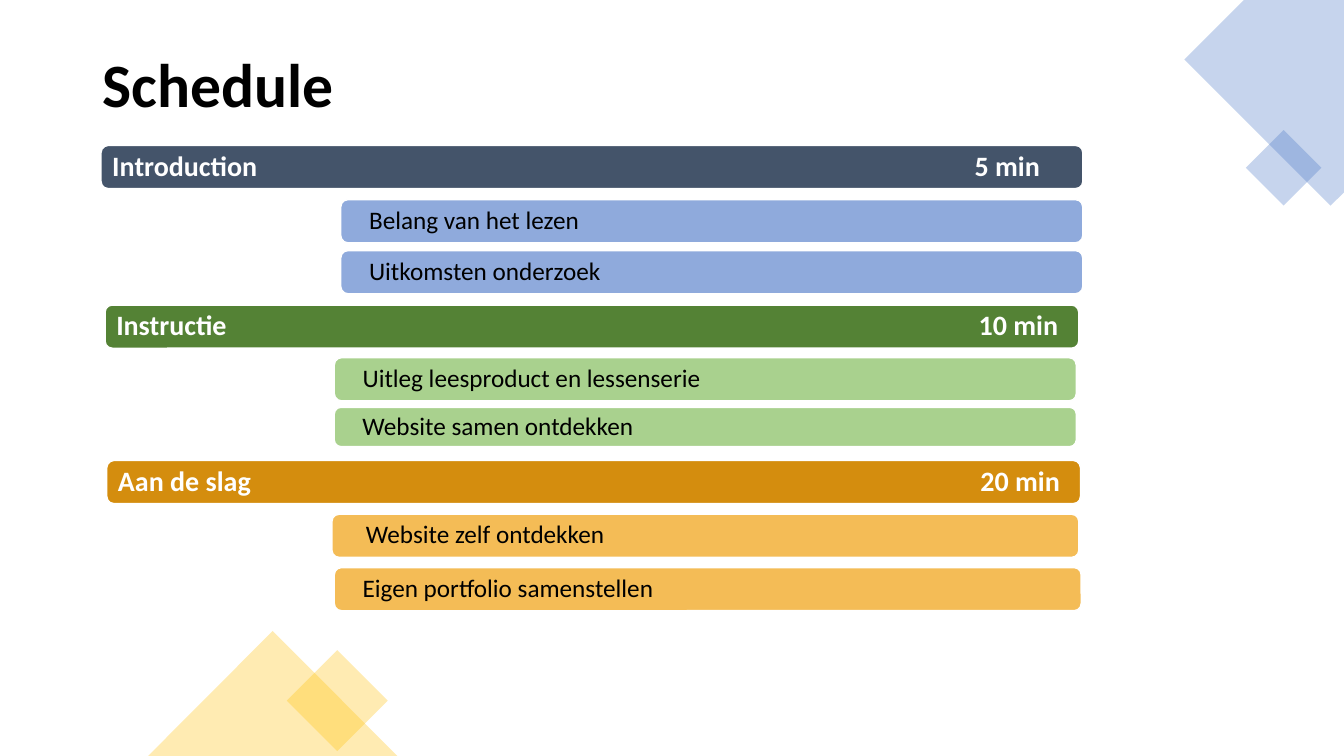
import pptx
import pptx.dml.color
import pptx.enum.shapes
import pptx.enum.text
import pptx.oxml
import pptx.oxml.ns
import pptx.util

Pt = pptx.util.Pt
SHAPES = pptx.enum.shapes.MSO_SHAPE
FONT = "Calibri"
BLUE, YELLOW = "4472C4", "FFC000"
BAR_HEIGHT = 30.8
MINUTES_TAB = 616

# Section: name, minutes, (left, top, width), fill, task fill, tasks
# Task: text, (left, top, width, height), text indent
SECTIONS = [
    ("Introduction", "5 min", (72.2, 103.9, 701.3), "44546A", "8FAADC", [
        ("Belang van het lezen", (243.4, 142.6, 530, BAR_HEIGHT), 12.2),
        ("Uitkomsten onderzoek", (243.4, 179, 530, BAR_HEIGHT), 12.2),
    ]),
    ("Instructie", "10 min", (75.1, 217.9, 695.5), "548235", "A9D18E", [
        ("Uitleg leesproduct en lessenserie", (238.8, 255.5, 530, BAR_HEIGHT), 12.2),
        ("Website samen ontdekken", (238.8, 291, 530, 28), 12.2),
    ]),
    ("Aan de slag", "20 min", (76.3, 328.9, 695.5), "D48D0E", "F4BC56", [
        ("Website zelf ontdekken", (237.1, 367.3, 533.5, BAR_HEIGHT), 16.3),
        ("Eigen portfolio samenstellen", (238.8, 405.4, 533.5, BAR_HEIGHT), 12.2),
    ]),
]


def rgb(hex_colour):
    return pptx.dml.color.RGBColor.from_string(hex_colour)


def paint(shape, colour, opacity=None):
    """Fill a shape, optionally see-through, without shadow or outline."""
    shape.shadow.inherit = False
    shape.fill.solid()
    shape.fill.fore_color.rgb = rgb(colour)
    shape.line.fill.background()
    if opacity is not None:
        solid = shape.fill._xPr.find(pptx.oxml.ns.qn("a:solidFill"))
        alpha = pptx.oxml.parse_xml(
            f'<a:alpha {pptx.oxml.ns.nsdecls("a")} val="{opacity * 1000}"/>')
        solid[0].append(alpha)


def add_ornament(slide, kind, left, top, width, height, colour, rotation=0):
    ornament = slide.shapes.add_shape(kind, Pt(left), Pt(top), Pt(width), Pt(height))
    ornament.rotation = rotation
    paint(ornament, colour, 30)


def add_corner(slide, points):
    (start_x, start_y), *rest = [(Pt(x), Pt(y)) for x, y in points]
    outline = slide.shapes.build_freeform(start_x, start_y)
    outline.add_line_segments(rest, close=True)
    paint(outline.convert_to_shape(), BLUE, 30)


def write(frame, text, size, colour, bold):
    """Write one left-aligned line, centred vertically."""
    frame.word_wrap = True
    frame.vertical_anchor = pptx.enum.text.MSO_ANCHOR.MIDDLE
    line = frame.paragraphs[0]
    line.alignment = pptx.enum.text.PP_ALIGN.LEFT
    line.line_spacing = 0.9
    run = line.add_run()
    run.text = text
    run.font.name = FONT
    run.font.size = Pt(size)
    run.font.bold = bold
    run.font.color.rgb = rgb(colour)
    return line


def add_bar(slide, box, fill, text, size, colour, bold=False, indent=0):
    bar = slide.shapes.add_shape(SHAPES.ROUNDED_RECTANGLE, *map(Pt, box))
    paint(bar, fill)
    bar.line.color.rgb = rgb("FFFFFF")
    bar.line.width = Pt(1)
    frame = bar.text_frame
    frame.margin_left = Pt(6.5 + indent)
    frame.margin_right = frame.margin_top = frame.margin_bottom = Pt(6.5)
    return write(frame, text, size, colour, bold)


def add_section(slide, name, minutes, place, fill, task_fill, tasks):
    heading = add_bar(slide, (*place, BAR_HEIGHT), fill,
                      f"{name}\t{minutes}", 20, "FFFFFF", bold=True)
    heading._p.get_or_add_pPr().append(pptx.oxml.parse_xml(
        f'<a:tabLst {pptx.oxml.ns.nsdecls("a")}>'
        f'<a:tab pos="{Pt(MINUTES_TAB)}" algn="l"/></a:tabLst>'))
    for task, box, indent in tasks:
        add_bar(slide, box, task_fill, task, 18, "000000", indent=indent)


def main():
    deck = pptx.Presentation()
    deck.slide_width, deck.slide_height = Pt(960), Pt(540)
    slide = deck.slides.add_slide(deck.slide_layouts[6])

    # Corner ornaments
    add_corner(slide, [(960, 0), (888.5, 0), (846, 42.5), (950.4, 146.9), (960, 137.5)])
    add_ornament(slide, SHAPES.RECTANGLE, 897.8, 100.8, 38.2, 38.2, BLUE, 45)
    add_ornament(slide, SHAPES.RECTANGLE, 215.4, 475, 51, 51, YELLOW, 45)
    add_ornament(slide, SHAPES.ISOSCELES_TRIANGLE, 105.8, 450.7, 178, 89.3, YELLOW)

    # Title
    title = slide.shapes.add_textbox(Pt(66), Pt(10), Pt(828), Pt(104.4))
    write(title.text_frame, "Schedule", 44, "000000", True)

    # Schedule
    for section in SECTIONS:
        add_section(slide, *section)

    deck.save("out.pptx")


if __name__ == "__main__":
    main()
